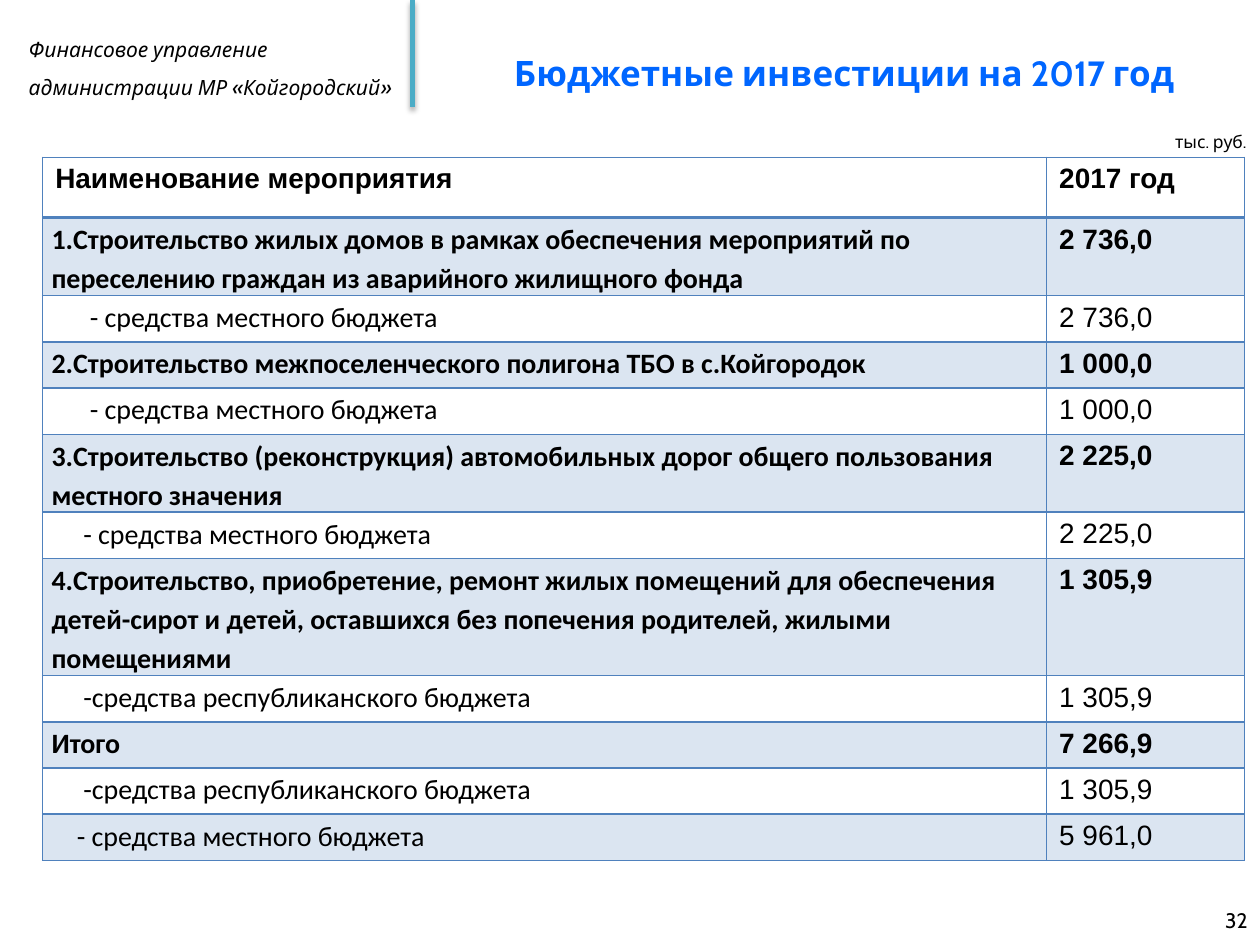
from lxml import etree
from pptx import Presentation
from pptx.dml.color import RGBColor
from pptx.enum.shapes import MSO_CONNECTOR
from pptx.enum.text import MSO_ANCHOR, PP_ALIGN
from pptx.oxml import parse_xml
from pptx.oxml.ns import nsdecls, qn
from pptx.util import Cm, Pt

STRAIGHT = MSO_CONNECTOR.STRAIGHT
TOP, MIDDLE = MSO_ANCHOR.TOP, MSO_ANCHOR.MIDDLE
LEFT, RIGHT = PP_ALIGN.LEFT, PP_ALIGN.RIGHT

# Content
OFFICE = "Финансовое управление\nадминистрации МР «Койгородский»"
TITLE = "Бюджетные инвестиции на 2017 год"
UNIT = "тыс. руб."
PAGE_NUMBER = "32"
HEADER = ("Наименование мероприятия", "2017 год")

# Name, amount, text lines, indent in cm, bold, shaded
ROWS = [
    ("1.Строительство жилых домов в рамках обеспечения мероприятий по "
     "переселению граждан из аварийного жилищного фонда", "2 736,0", 2, 0, True, True),
    ("- средства местного бюджета", "2 736,0", 1, 0.77, False, False),
    ("2.Строительство межпоселенческого полигона ТБО в с.Койгородок",
     "1 000,0", 1, 0, True, True),
    ("- средства местного бюджета", "1 000,0", 1, 0.77, False, False),
    ("3.Строительство (реконструкция) автомобильных дорог общего пользования "
     "местного значения", "2 225,0", 2, 0, True, True),
    ("- средства местного бюджета", "2 225,0", 1, 0.64, False, False),
    ("4.Строительство, приобретение, ремонт жилых помещений для обеспечения "
     "детей-сирот и детей, оставшихся без попечения родителей, жилыми помещениями",
     "1 305,9", 3, 0, True, True),
    ("-средства республиканского бюджета", "1 305,9", 1, 0.64, False, False),
    ("Итого", "7 266,9", 1, 0, True, True),
    ("-средства республиканского бюджета", "1 305,9", 1, 0.64, False, False),
    ("- средства местного бюджета", "5 961,0", 1, 0.51, False, True),
]

THEME = {
    "text": "000000", "title": "0066FF", "rule": "4BACC6", "grid": "4F81BD",
    "shade_percent": 20,
    "display": "Cabin", "names": "Calibri", "numbers": "Arial",
    "title_size": 20, "table_size": 16, "label_size": 12, "unit_size": 10,
}

# Layout in cm
COLUMNS = (20.24, 3.99)
HEADER_HEIGHT = 1.22
LINE_HEIGHTS = {1: 0.88, 2: 1.57, 3: 2.36}
NAME_MARGIN = 0.18


def style(frame, font, size, color=THEME["text"], bold=False, italic=False,
          spacing=None, align=LEFT):
    for para in frame.paragraphs:
        para.alignment = align
        if spacing:
            para.line_spacing = spacing
        for span in para.runs:
            span.font.name = font
            span.font.size = Pt(size)
            span.font.bold = bold
            span.font.italic = italic
            span.font.color.rgb = RGBColor.from_string(color)


def add_text(page, area, text, size, wrap=True, anchor=TOP, **look):
    box = page.shapes.add_textbox(*(Cm(value) for value in area))
    frame = box.text_frame
    frame.word_wrap = wrap
    frame.vertical_anchor = anchor
    frame.text = text
    style(frame, THEME["display"], size, **look)


def add_rule(page):
    rule = page.shapes.add_connector(STRAIGHT, Cm(8.31), 0, Cm(8.31), Cm(2.16))
    rule.line.color.rgb = RGBColor.from_string(THEME["rule"])
    rule.line.width = Pt(3)
    rule.element.spPr.append(parse_xml(
        f'<a:effectLst {nsdecls("a")}>'
        f'<a:outerShdw blurRad="{Pt(3.1)}" dist="{Pt(1.8)}" dir="5400000" rotWithShape="0">'
        f'<a:srgbClr val="{THEME["text"]}"><a:alpha val="35000"/></a:srgbClr>'
        '</a:outerShdw></a:effectLst>'))


def finish_cell(cell, shaded, top=1, bottom=1):
    properties = cell._tc.get_or_add_tcPr()
    for side, width in (("L", 1), ("R", 1), ("T", top), ("B", bottom)):
        properties.append(parse_xml(
            f'<a:ln{side} {nsdecls("a")} w="{Pt(width)}"><a:solidFill>'
            f'<a:srgbClr val="{THEME["grid"]}"/></a:solidFill></a:ln{side}>'))
    if shaded:
        cell.fill.solid()
        cell.fill.fore_color.rgb = RGBColor.from_string(THEME["grid"])
        color = properties.find(qn("a:solidFill")).find(qn("a:srgbClr"))
        etree.SubElement(color, qn("a:alpha"), val=str(THEME["shade_percent"] * 1000))
    else:
        cell.fill.background()


def add_budget_table(page):
    heights = [HEADER_HEIGHT] + [LINE_HEIGHTS[row[2]] for row in ROWS]
    table = page.shapes.add_table(len(heights), len(COLUMNS), Cm(0.86), Cm(3.17),
                                  Cm(sum(COLUMNS)), Cm(sum(heights))).table
    table.first_row = table.horz_banding = False
    for column, width in zip(table.columns, COLUMNS):
        column.width = Cm(width)
    for row, height in zip(table.rows, heights):
        row.height = Cm(height)

    # Header row
    size = THEME["table_size"]
    for index, text in enumerate(HEADER):
        cell = table.cell(0, index)
        cell.text_frame.text = text
        style(cell.text_frame, THEME["numbers"], size, bold=True)
        finish_cell(cell, False, bottom=2)

    # Budget rows
    for index, (name, amount, _, indent, bold, shaded) in enumerate(ROWS, 1):
        name_cell, amount_cell = table.cell(index, 0), table.cell(index, 1)
        name_cell.text_frame.text = name
        amount_cell.text_frame.text = amount
        name_cell.margin_left = Cm(NAME_MARGIN + indent)
        name_cell.margin_right = Cm(NAME_MARGIN)
        name_cell.margin_top = name_cell.margin_bottom = 0
        style(name_cell.text_frame, THEME["names"], size, bold=bold, spacing=1.15)
        style(amount_cell.text_frame, THEME["numbers"], size, bold=bold)
        for cell in (name_cell, amount_cell):
            finish_cell(cell, shaded, top=2 if index == 1 else 1)


def main():
    deck = Presentation()
    deck.slide_width, deck.slide_height = Cm(25.4), Cm(19.05)
    page = deck.slides.add_slide(deck.slide_layouts[6])

    # Heading band
    add_text(page, (0.33, 0.36, 7.98, 1.8), OFFICE, THEME["label_size"],
             italic=True, spacing=1.5)
    add_rule(page)
    add_text(page, (10.11, 0, 15.29, 2.92), TITLE, THEME["title_size"],
             anchor=MIDDLE, color=THEME["title"], bold=True)

    # Table, page number and unit
    add_budget_table(page)
    add_text(page, (19.48, 18.03, 5.92, 1.02), PAGE_NUMBER, THEME["label_size"],
             anchor=MIDDLE, align=RIGHT)
    add_text(page, (23.44, 2.51, 1.98, 0.69), UNIT, THEME["unit_size"], wrap=False)
    deck.save("out.pptx")


if __name__ == "__main__":
    main()
